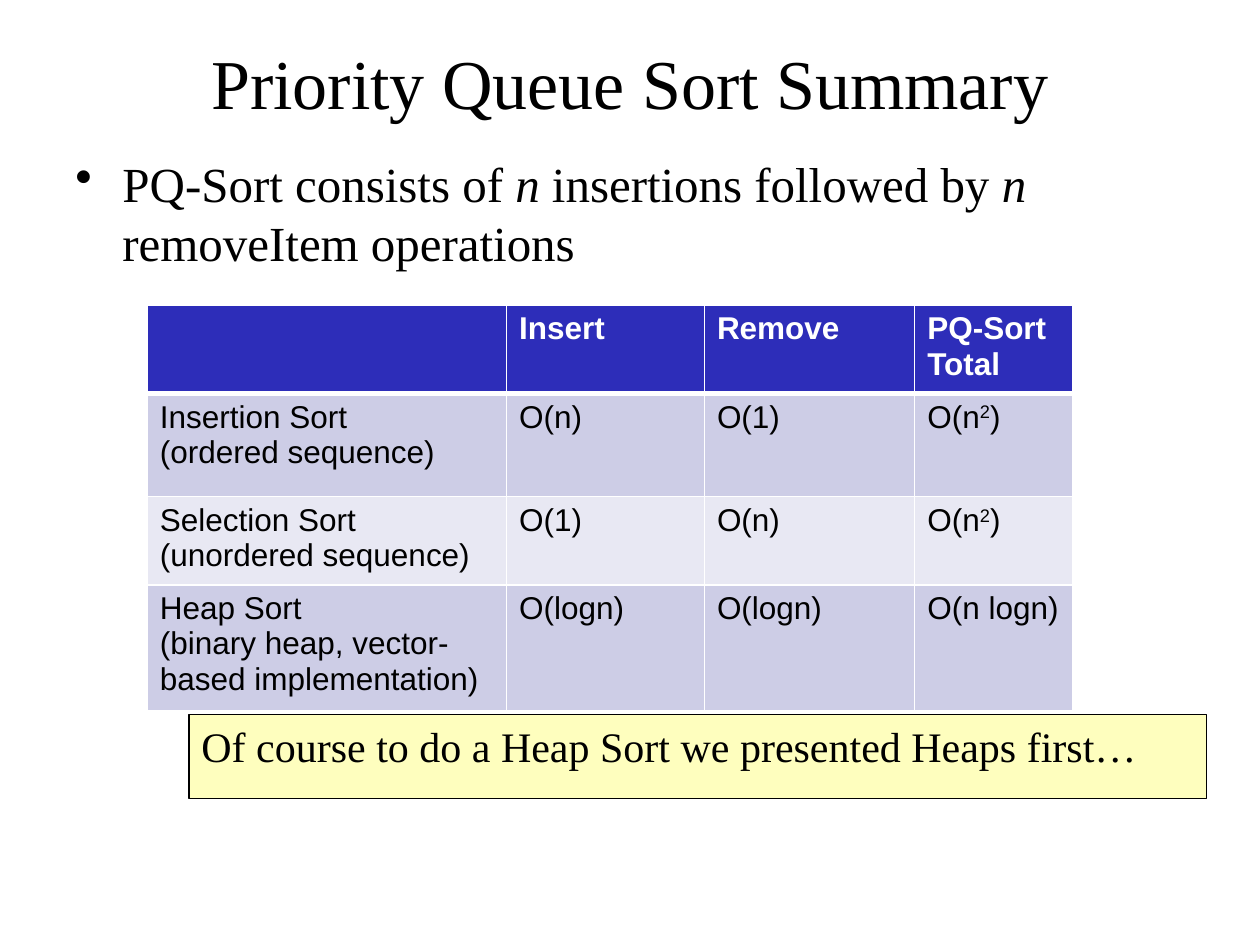
from dataclasses import dataclass

import pptx
import pptx.dml.color
import pptx.enum.shapes
import pptx.enum.text
import pptx.oxml.ns
import pptx.util
from lxml import etree
from pptx.util import Cm

COLORS = {
    "text": "000000",
    "white": "FFFFFF",
    "header": "2D2DB9",
    "band_dark": "CDCDE6",
    "band_light": "E8E8F3",
    "note": "FEFEBE",
}
SERIF, SANS = "Times New Roman", "Arial"


@dataclass(frozen=True)
class Style:
    font: str
    size: int
    color: str = "text"
    bold: bool = False


@dataclass(frozen=True)
class Piece:
    text: str
    italic: bool = False
    superscript: bool = False


@dataclass(frozen=True)
class TableRow:
    height: float
    fill: str
    cells: tuple[tuple[Piece, ...], ...]


def rgb(name: str) -> pptx.dml.color.RGBColor:
    return pptx.dml.color.RGBColor.from_string(COLORS[name])


def plain(*texts: str) -> tuple[tuple[Piece, ...], ...]:
    return tuple((Piece(text),) for text in texts)


def add_text(para, pieces: tuple[Piece, ...], style: Style) -> None:
    """Add the pieces run by run; a newline becomes a line break."""
    for piece in pieces:
        for number, line in enumerate(piece.text.split("\n")):
            if number:
                para.add_line_break()
            span = para.add_run()
            span.text = line
            span.font.name = style.font
            span.font.size = pptx.util.Pt(style.size)
            span.font.bold = style.bold
            span.font.italic = piece.italic
            span.font.color.rgb = rgb(style.color)
            if piece.superscript:
                span.font._element.set("baseline", "30000")


def add_text_box(page, left: float, top: float, width: float, height: float):
    box = page.shapes.add_textbox(Cm(left), Cm(top), Cm(width), Cm(height))
    box.text_frame.word_wrap = True
    return box


def add_bullet(para, indent: float) -> None:
    properties = para._p.get_or_add_pPr()
    properties.set("marL", str(Cm(indent)))
    properties.set("indent", str(-Cm(indent)))
    bullet = etree.SubElement(properties, pptx.oxml.ns.qn("a:buChar"))
    bullet.set("char", "•")


def set_borders(cell, widths: dict[str, int]) -> None:
    """Draw white borders, placed before the fill as the schema asks."""
    qn = pptx.oxml.ns.qn
    properties = cell._tc.get_or_add_tcPr()
    for position, (side, width) in enumerate(widths.items()):
        line = etree.Element(qn(f"a:{side}"), w=str(pptx.util.Pt(width)))
        fill = etree.SubElement(line, qn("a:solidFill"))
        etree.SubElement(fill, qn("a:srgbClr"), val=COLORS["white"])
        properties.insert(position, line)


def add_cost_table(page, left: float, top: float, columns: tuple[float, ...],
                   rows: tuple[TableRow, ...]) -> None:
    frame = page.shapes.add_table(
        len(rows), len(columns), Cm(left), Cm(top),
        Cm(sum(columns)), Cm(sum(row.height for row in rows)))
    table = frame.table
    for column, width in zip(table.columns, columns):
        column.width = Cm(width)
    for index, row in enumerate(rows):
        table.rows[index].height = Cm(row.height)
        is_header = index == 0
        style = Style(SANS, 18, "white" if is_header else "text", is_header)
        # The rule under the header is thicker
        borders = {"lnL": 1, "lnR": 1, "lnT": 3 if index == 1 else 1,
                   "lnB": 3 if is_header else 1}
        for cell, pieces in zip(table.rows[index].cells, row.cells):
            cell.fill.solid()
            cell.fill.fore_color.rgb = rgb(row.fill)
            set_borders(cell, borders)
            if pieces:
                add_text(cell.text_frame.paragraphs[0], pieces, style)


def main() -> None:
    deck = pptx.Presentation()
    deck.slide_width, deck.slide_height = Cm(25.4), Cm(19.05)
    page = deck.slides.add_slide(deck.slide_layouts[6])

    # Title
    title = add_text_box(page, 1.27, 0.76, 22.86, 1.78)
    title.text_frame.vertical_anchor = pptx.enum.text.MSO_ANCHOR.MIDDLE
    para = title.text_frame.paragraphs[0]
    para.alignment = pptx.enum.text.PP_ALIGN.CENTER
    add_text(para, (Piece("Priority Queue Sort Summary"),), Style(SERIF, 40))

    # Bulleted statement
    body = add_text_box(page, 1.27, 2.97, 22.86, 2.97)
    para = body.text_frame.paragraphs[0]
    para.space_before = pptx.util.Pt(5.6)
    add_bullet(para, 0.95)
    add_text(para, (
        Piece("PQ-Sort consists of "), Piece("n", italic=True),
        Piece(" insertions followed by "), Piece("n ", italic=True),
        Piece("removeItem operations"),
    ), Style(SERIF, 28))

    # Running times of the three sorts
    quadratic = (Piece("O(n"), Piece("2", superscript=True), Piece(")"))
    add_cost_table(page, 2.97, 6.15, (7.24, 3.99, 4.24, 3.18), (
        TableRow(1.78, "header",
                 ((), *plain("Insert", "Remove", "PQ-Sort Total"))),
        TableRow(2.08, "band_dark",
                 (*plain("Insertion Sort \n(ordered sequence)",
                         "O(n)", "O(1)"), quadratic)),
        TableRow(1.63, "band_light",
                 (*plain("Selection Sort (unordered sequence)",
                         "O(1)", "O(n)"), quadratic)),
        TableRow(2.34, "band_dark",
                 plain("Heap Sort \n(binary heap, vector-based implementation)",
                       "O(logn)", "O(logn)", "O(n logn)")),
    ))

    # Closing note
    note = page.shapes.add_shape(
        pptx.enum.shapes.MSO_SHAPE.RECTANGLE,
        Cm(3.81), Cm(14.4), Cm(20.52), Cm(1.7))
    note.shadow.inherit = False
    note.fill.solid()
    note.fill.fore_color.rgb = rgb("note")
    note.line.color.rgb = rgb("text")
    note.line.width = pptx.util.Pt(0.75)
    note.text_frame.word_wrap = True
    note.text_frame.vertical_anchor = pptx.enum.text.MSO_ANCHOR.TOP
    para = note.text_frame.paragraphs[0]
    para.alignment = pptx.enum.text.PP_ALIGN.LEFT
    add_text(para, (Piece("Of course to do a Heap Sort we presented Heaps first…"),),
             Style(SERIF, 24))

    deck.save("out.pptx")


if __name__ == "__main__":
    main()
